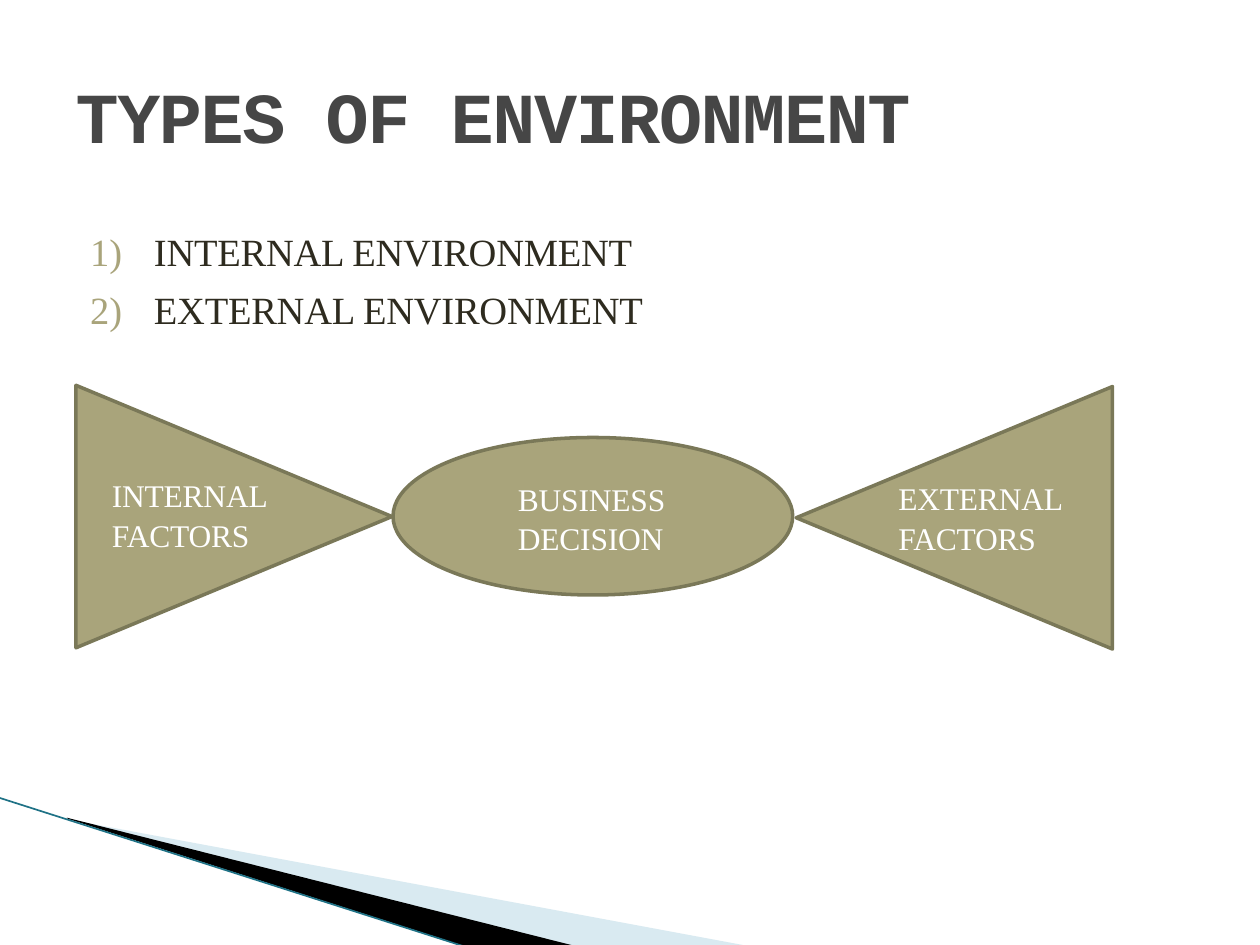
from lxml import etree
from pptx import Presentation
from pptx.dml.color import RGBColor
from pptx.enum.shapes import MSO_CONNECTOR, MSO_SHAPE
from pptx.enum.text import MSO_ANCHOR
from pptx.oxml.ns import qn
from pptx.util import Pt

STRAIGHT = MSO_CONNECTOR.STRAIGHT
OVAL = MSO_SHAPE.OVAL
TOP, MIDDLE = MSO_ANCHOR.TOP, MSO_ANCHOR.MIDDLE

COLORS = {
    "title": "464646", "body": "2E2B1F", "label": "FFFFFF",
    "khaki": "A9A47B", "edge": "7A7858",
    "pale": "A0CBDC", "black": "000000", "teal": "1F7286",
}
SERIF, MONO = "Times New Roman", "Courier New"

TITLE = "TYPES OF ENVIRONMENT"
ENVIRONMENTS = ["INTERNAL ENVIRONMENT", "EXTERNAL ENVIRONMENT"]
LABELS = [
    (["INTERNAL", "FACTORS"], (63.9, 271.2, 92, 45)),
    (["BUSINESS", "DECISION"], (295.9, 273, 90, 45)),
    (["EXTERNAL", "FACTORS"], (513.3, 272.6, 98, 45)),
]
WEDGES = [
    ([(39.6, 468.4), (428.4, 540.7), (328.3, 540.7), (39.6, 468)], "pale", 40),
    ([(38.2, 467.3), (329, 540.7), (267.8, 541.4), (38.9, 468)], "black", 100),
]
SWOOSH = (-0.7, 455.8, 267.1, 541.4)
TRIANGLES = [(43.4, 220.2, 224), (635.7, 220.9, 455)]
TRIANGLE_HEIGHT = 150
ELLIPSE = (224.6, 250, 228.4, 90)


def color(name):
    return RGBColor.from_string(COLORS[name])


def paint(shape, fill, line=None, opacity=100):
    shape.shadow.inherit = False
    shape.fill.solid()
    shape.fill.fore_color.rgb = color(fill)
    if opacity < 100:
        tint = shape.fill._xPr.find(qn("a:solidFill"))[0]
        etree.SubElement(tint, qn("a:alpha")).set("val", str(opacity * 1000))
    if line:
        shape.line.color.rgb = color(line)
        shape.line.width = Pt(2)
        etree.SubElement(shape.line._get_or_add_ln(), qn("a:round"))
    else:
        shape.line.fill.background()


def add_polygon(page, points, **format):
    corners = [(Pt(x), Pt(y)) for x, y in points]
    builder = page.shapes.build_freeform(*corners[0], scale=1.0)
    builder.add_line_segments(corners[1:], close=True)
    paint(builder.convert_to_shape(), **format)


def number(para, hanging):
    properties = para._p.get_or_add_pPr()
    properties.set("marL", str(Pt(hanging)))
    properties.set("indent", str(-Pt(hanging)))
    bullet_color = etree.SubElement(properties, qn("a:buClr"))
    etree.SubElement(bullet_color, qn("a:srgbClr")).set("val", COLORS["khaki"])
    etree.SubElement(properties, qn("a:buAutoNum")).set("type", "arabicParenR")


def add_text(page, lines, place, size, ink, font=SERIF, bold=False, anchor=TOP,
             spacing=1.05, gap=0, tracking=-0.1, hanging=0):
    box = page.shapes.add_textbox(*map(Pt, place))
    frame = box.text_frame
    frame.word_wrap = True
    frame.vertical_anchor = anchor
    frame.margin_left = frame.margin_right = 0
    frame.margin_top = frame.margin_bottom = 0
    for index, line in enumerate(lines):
        para = frame.add_paragraph() if index else frame.paragraphs[0]
        if hanging:
            number(para, hanging)
        para.line_spacing = spacing
        if index:
            para.space_before = Pt(gap)
        span = para.add_run()
        span.text = line
        span.font.name = font
        span.font.size = Pt(size)
        span.font.bold = bold
        span.font.color.rgb = color(ink)
        span._r.get_or_add_rPr().set("spc", str(round(tracking * 100)))


def main():
    deck = Presentation()
    deck.slide_width, deck.slide_height = Pt(720), Pt(540)
    page = deck.slides.add_slide(deck.slide_layouts[6])

    for points, fill, opacity in WEDGES:
        add_polygon(page, points, fill=fill, opacity=opacity)
    swoosh = page.shapes.add_connector(STRAIGHT, *map(Pt, SWOOSH))
    swoosh.line.color.rgb = color("teal")
    swoosh.line.width = Pt(0.95)
    etree.SubElement(swoosh._element.spPr, qn("a:effectLst"))

    add_text(page, [TITLE], (43.2, 37, 544, 57), 41, "title", font=MONO,
             bold=True, anchor=MIDDLE, spacing=1, tracking=-0.8)
    add_text(page, ENVIRONMENTS, (51.5, 129, 340, 59), 22, "body",
             gap=5.3, hanging=36.5)

    paint(page.shapes.add_shape(OVAL, *map(Pt, ELLIPSE)), "khaki", "edge")
    for base, top, tip in TRIANGLES:
        points = [(base, top), (tip, top + TRIANGLE_HEIGHT / 2),
                  (base, top + TRIANGLE_HEIGHT)]
        add_polygon(page, points, fill="khaki", line="edge")
    for lines, place in LABELS:
        add_text(page, lines, place, 18, "label")

    deck.save("out.pptx")


if __name__ == "__main__":
    main()
